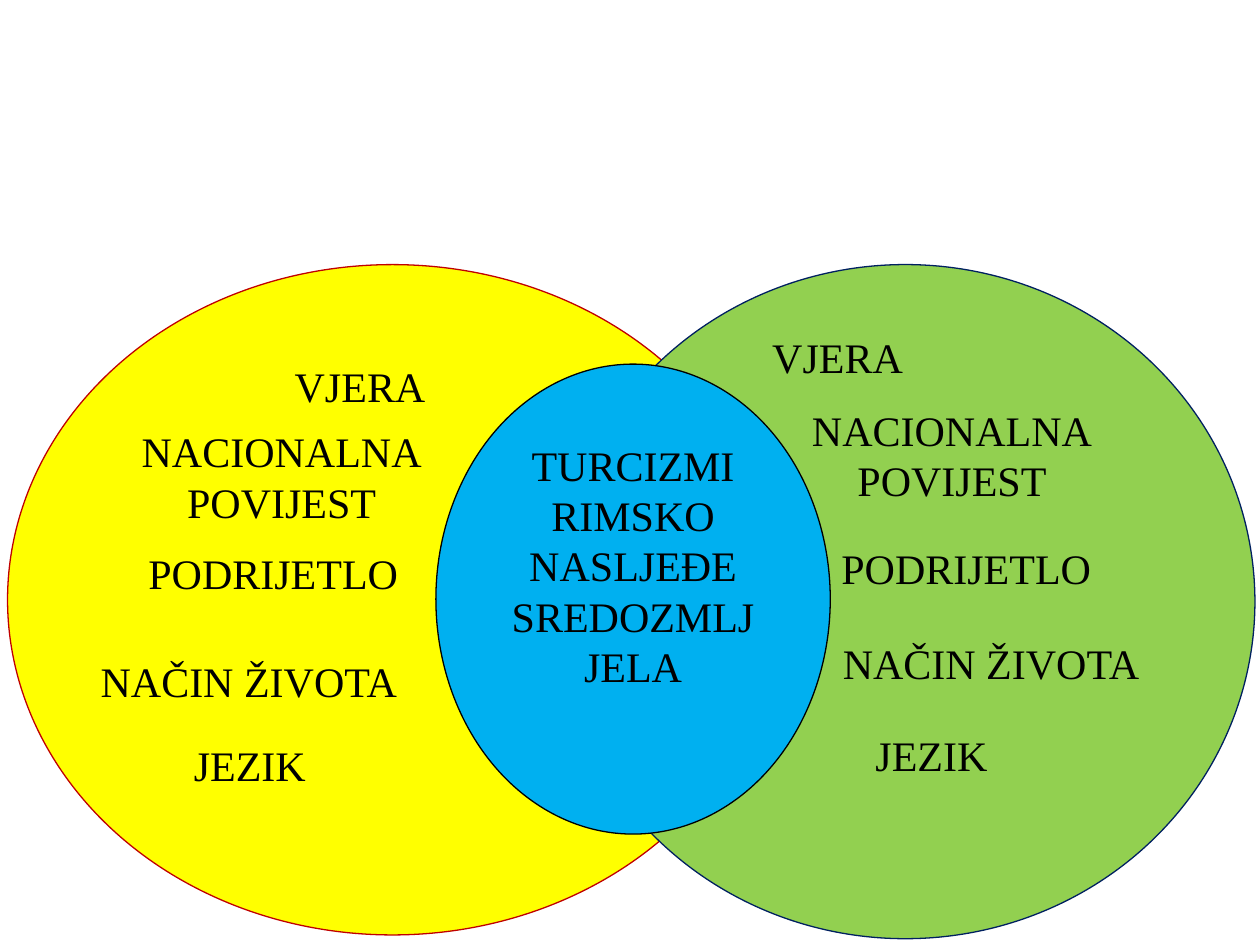
from dataclasses import dataclass

import pptx
import pptx.dml.color
import pptx.enum.shapes
import pptx.enum.text
import pptx.util
from pptx.util import Inches

RGB = pptx.dml.color.RGBColor.from_string
ALIGN = pptx.enum.text.PP_ALIGN
ANCHOR = pptx.enum.text.MSO_ANCHOR


@dataclass(frozen=True)
class Theme:
    font: str = "Times New Roman"
    size: float = 24
    outline: float = 0.75
    text: str = "000000"
    left_fill: str = "FFFF00"
    left_line: str = "C00000"
    right_fill: str = "92D050"
    right_line: str = "002060"
    shared_fill: str = "00B0F0"
    shared_line: str = "000000"


@dataclass(frozen=True)
class Circle:
    left: float
    top: float
    width: float
    height: float
    fill: str
    line: str
    lines: tuple[str, ...] = ()


@dataclass(frozen=True)
class Topic:
    lines: tuple[str, ...]
    width: float
    left_spot: tuple[float, float]
    right_spot: tuple[float, float]


THEME = Theme()
SETS = (
    Circle(0.06, 2.1, 6.11, 5.32, THEME.left_fill, THEME.left_line),
    Circle(4.41, 2.1, 5.55, 5.35, THEME.right_fill, THEME.right_line),
)
SHARED = Circle(3.46, 2.89, 3.13, 3.73, THEME.shared_fill, THEME.shared_line,
                ("TURCIZMI", "RIMSKO NASLJEĐE", "SREDOZMLJJELA"))
TOPICS = (
    Topic(("VJERA",), 1.25, (2.24, 2.81), (6.03, 2.58)),
    Topic(("NACIONALNA", "POVIJEST"), 2.45, (1.01, 3.33), (6.33, 3.16)),
    Topic(("PODRIJETLO",), 2.2, (1.08, 4.3), (6.58, 4.26)),
    Topic(("NAČIN ŽIVOTA",), 2.58, (0.7, 5.15), (6.59, 5.01)),
    Topic(("JEZIK",), 1.1, (1.44, 5.82), (6.85, 5.74)),
)


def write_lines(tf, lines: tuple[str, ...], align) -> None:
    for i, line in enumerate(lines):
        p = tf.paragraphs[0] if i == 0 else tf.add_paragraph()
        p.alignment = align
        r = p.add_run()
        r.text = line
        r.font.name = THEME.font
        r.font.size = pptx.util.Pt(THEME.size)
        r.font.color.rgb = RGB(THEME.text)


def draw_circle(s, circle: Circle) -> None:
    sp = s.shapes.add_shape(
        pptx.enum.shapes.MSO_SHAPE.OVAL, Inches(circle.left), Inches(circle.top),
        Inches(circle.width), Inches(circle.height))
    sp.shadow.inherit = False
    sp.fill.solid()
    sp.fill.fore_color.rgb = RGB(circle.fill)
    sp.line.color.rgb = RGB(circle.line)
    sp.line.width = pptx.util.Pt(THEME.outline)
    tf = sp.text_frame
    tf.word_wrap = True
    tf.vertical_anchor = ANCHOR.TOP
    write_lines(tf, circle.lines, ALIGN.CENTER)


def draw_topic(s, topic: Topic, spot: tuple[float, float]) -> None:
    left, top = spot
    height = 0.1 + 0.4 * len(topic.lines)
    sp = s.shapes.add_textbox(
        Inches(left), Inches(top), Inches(topic.width), Inches(height))
    tf = sp.text_frame
    tf.word_wrap = False
    tf.auto_size = pptx.enum.text.MSO_AUTO_SIZE.SHAPE_TO_FIT_TEXT
    align = ALIGN.CENTER if len(topic.lines) > 1 else ALIGN.LEFT
    write_lines(tf, topic.lines, align)


def main() -> None:
    prs = pptx.Presentation()
    prs.slide_width, prs.slide_height = Inches(10), Inches(7.5)
    s = prs.slides.add_slide(prs.slide_layouts[6])
    for circle in SETS:
        draw_circle(s, circle)
    for topic in TOPICS:
        for spot in (topic.left_spot, topic.right_spot):
            draw_topic(s, topic, spot)
    draw_circle(s, SHARED)
    prs.save("out.pptx")


if __name__ == "__main__":
    main()
